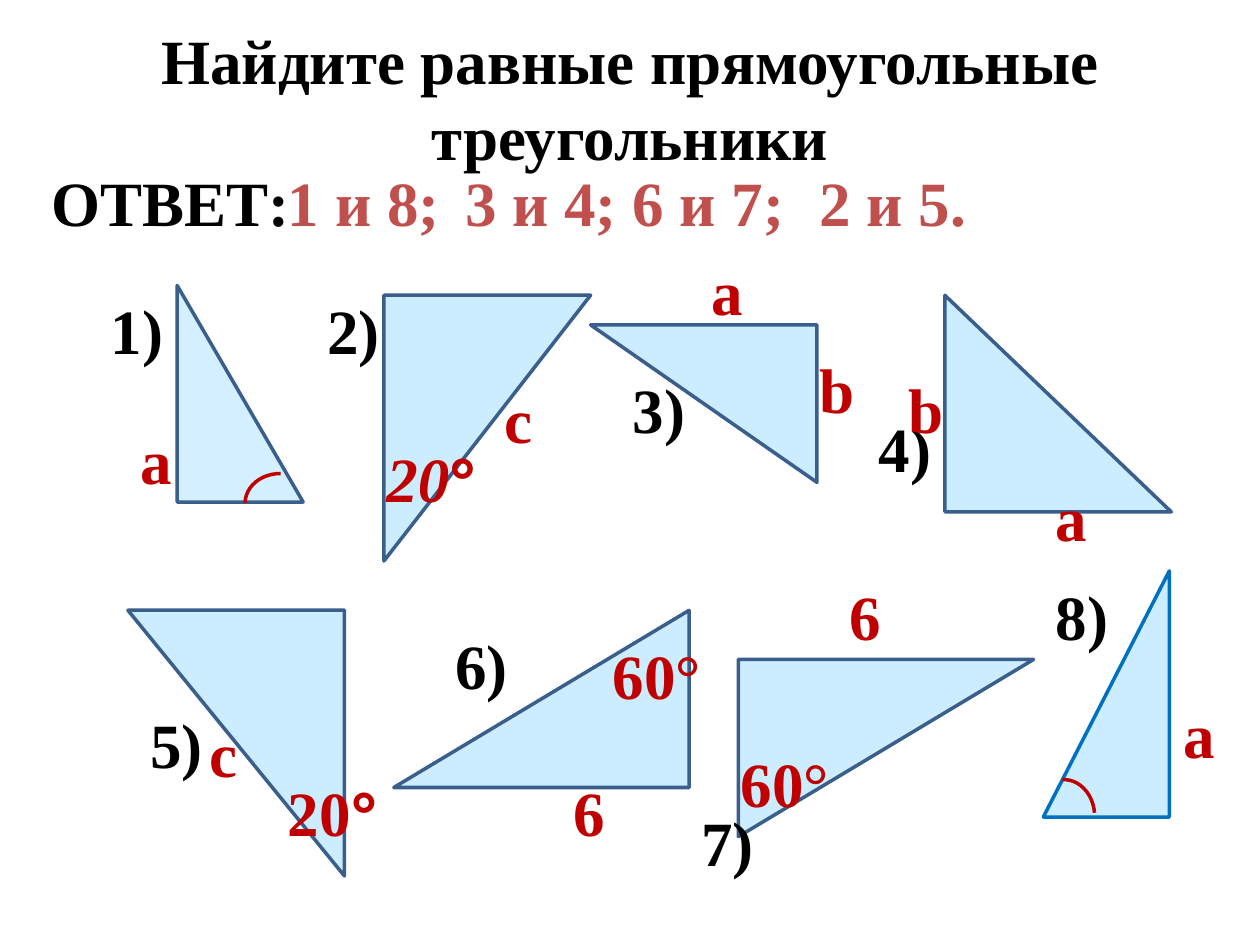
from lxml.etree import SubElement
from pptx import Presentation
from pptx.dml.color import RGBColor
from pptx.enum.shapes import MSO_SHAPE
from pptx.enum.text import MSO_ANCHOR, MSO_AUTO_SIZE, PP_ALIGN
from pptx.oxml.ns import qn
from pptx.util import Inches, Pt

COLORS = {"ink": "000000", "mark": "C00000", "answer": "C0504D",
          "fill": "CCECFF", "edge": "3A5F8C", "blue": "0070C0"}
FONT = "Times New Roman"
DEGREE_FONT = "Calibri"

# All places are in cells of a grid of 128 columns by 96 rows
WIDTH, HEIGHT, COLUMNS = 10, 7.5, 128
CELL = WIDTH / COLUMNS
LINE_ROWS = 9.1

TITLE = "Найдите равные прямоугольные треугольники"

# Column, row, width, height, rotation, flips, line colour, opacity
TRIANGLES = [
    (96.5, 29.5, 22, 23, 90, "H", "edge", 100),
    (63.5, 29.5, 16, 23, 90, "V", "edge", 100),
    (39, 30, 21, 27, 0, "V", "edge", 100),
    (46, 56, 18, 30, 270, "", "edge", 100),
    (106, 58, 12.8, 25, 0, "H", "blue", 100),
    (18, 29, 12.8, 22, 0, "", "edge", 83),
    (81, 61, 18, 30, 90, "", "edge", 100),
    (13, 62, 22, 27, 0, "HV", "edge", 100),
]
# Column, row, rotation
ARCS = [(25.5, 47.5, 270), (105.2, 79.2, 355.5)]

# Text, column, row, width, wrap
NUMBERS = [
    ("1)", 10, 29, 8, False), ("2)", 32, 29, 8, False),
    ("3)", 63, 37, 8, False), ("4)", 88, 41, 8, False),
    ("5)", 14, 71, 8, False), ("6)", 45, 63, 8.2, True),
    ("7)", 70, 81, 8, True), ("8)", 106, 58, 10, True),
]
MEASURES = [
    ("с", 50, 38, 5, True), ("a", 119, 70, 5.8, False),
    ("a", 106, 48, 6, False), ("с", 20, 72, 5.5, False),
    ("a", 71, 25, 6, True), ("a", 13, 42.2, 2.7, True),
    ("b", 82, 35, 6.1, False), ("b", 91, 37, 6.1, False),
    ("6", 57, 78, 4, True), ("6", 85, 58, 6, True),
    ("60°", 61, 64, 13.7, True), ("60°", 74, 75, 15.6, True),
]
# Text, column, row, width, wrap, italic number, italic degree sign
SMALL_ANGLES = [("20", 38, 44, 11.3, False, True, True),
                ("20", 28, 78, 13.8, True, False, True)]
ANSWERS = [
    ("1 и 8;", 28, 16, 18, True), ("3 и 4;", 46, 16, 18, True),
    ("6 и 7;", 63, 16, 18.2, True), ("2 и 5.", 82, 16, 17.7, False),
]
ANSWER_HEAD = [("ОТВЕТ:", 4, 16, 34.6, True)]


def cells(*counts):
    return [Inches(count * CELL) for count in counts]


def color(name):
    return RGBColor.from_string(COLORS[name])


def add_span(para, text, ink="ink", font=FONT, italic=False):
    span = para.add_run()
    span.text = text
    span.font.name = font
    span.font.size = Pt(36)
    span.font.bold = True
    span.font.italic = italic
    span.font.color.rgb = color(ink)


def add_text(page, text, column, row, width, wrap=True, height=LINE_ROWS,
             align=PP_ALIGN.LEFT, anchor=MSO_ANCHOR.TOP, grow=True, **style):
    box = page.shapes.add_textbox(*cells(column, row, width, height))
    frame = box.text_frame
    frame.word_wrap = wrap
    frame.auto_size = MSO_AUTO_SIZE.SHAPE_TO_FIT_TEXT if grow else MSO_AUTO_SIZE.NONE
    frame.vertical_anchor = anchor
    para = frame.paragraphs[0]
    para.alignment = align
    add_span(para, text, **style)
    return para


def add_outline(page, preset, place, rotation, line):
    shape = page.shapes.add_shape(preset, *cells(*place))
    shape.shadow.inherit = False
    shape.rotation = rotation
    shape.line.color.rgb = color(line)
    shape.line.width = Pt(2)
    return shape


def add_triangle(page, column, row, width, height, rotation, flips, line, opacity):
    shape = add_outline(page, MSO_SHAPE.RIGHT_TRIANGLE,
                        (column, row, width, height), rotation, line)
    shape.fill.solid()
    shape.fill.fore_color.rgb = color("fill")
    properties = shape._element.spPr
    for flip in flips:
        properties.find(qn("a:xfrm")).set("flip" + flip, "1")
    if opacity < 100:
        tint = properties.find(qn("a:solidFill"))[0]
        SubElement(tint, qn("a:alpha")).set("val", str(opacity * 1000))


def main():
    deck = Presentation()
    deck.slide_width, deck.slide_height = Inches(WIDTH), Inches(HEIGHT)
    page = deck.slides.add_slide(deck.slide_layouts[6])

    # Title
    add_text(page, TITLE, 6.4, 3.8, 115.2, height=12.2, align=PP_ALIGN.CENTER,
             anchor=MSO_ANCHOR.MIDDLE, grow=False)

    # Triangles and angle marks
    for triangle in TRIANGLES:
        add_triangle(page, *triangle)
    for column, row, rotation in ARCS:
        arc = add_outline(page, MSO_SHAPE.ARC, (column, row, 6, 7.2), rotation, "mark")
        arc.fill.background()

    # Numbers, side and angle labels, answers
    for labels, ink in ((NUMBERS, "ink"), (MEASURES, "mark"),
                        (ANSWERS, "answer"), (ANSWER_HEAD, "ink")):
        for label in labels:
            add_text(page, *label, ink=ink)
    for *label, italic, italic_degree in SMALL_ANGLES:
        para = add_text(page, *label, ink="mark", italic=italic)
        add_span(para, "°", ink="mark", font=DEGREE_FONT, italic=italic_degree)

    deck.save("out.pptx")


if __name__ == "__main__":
    main()
